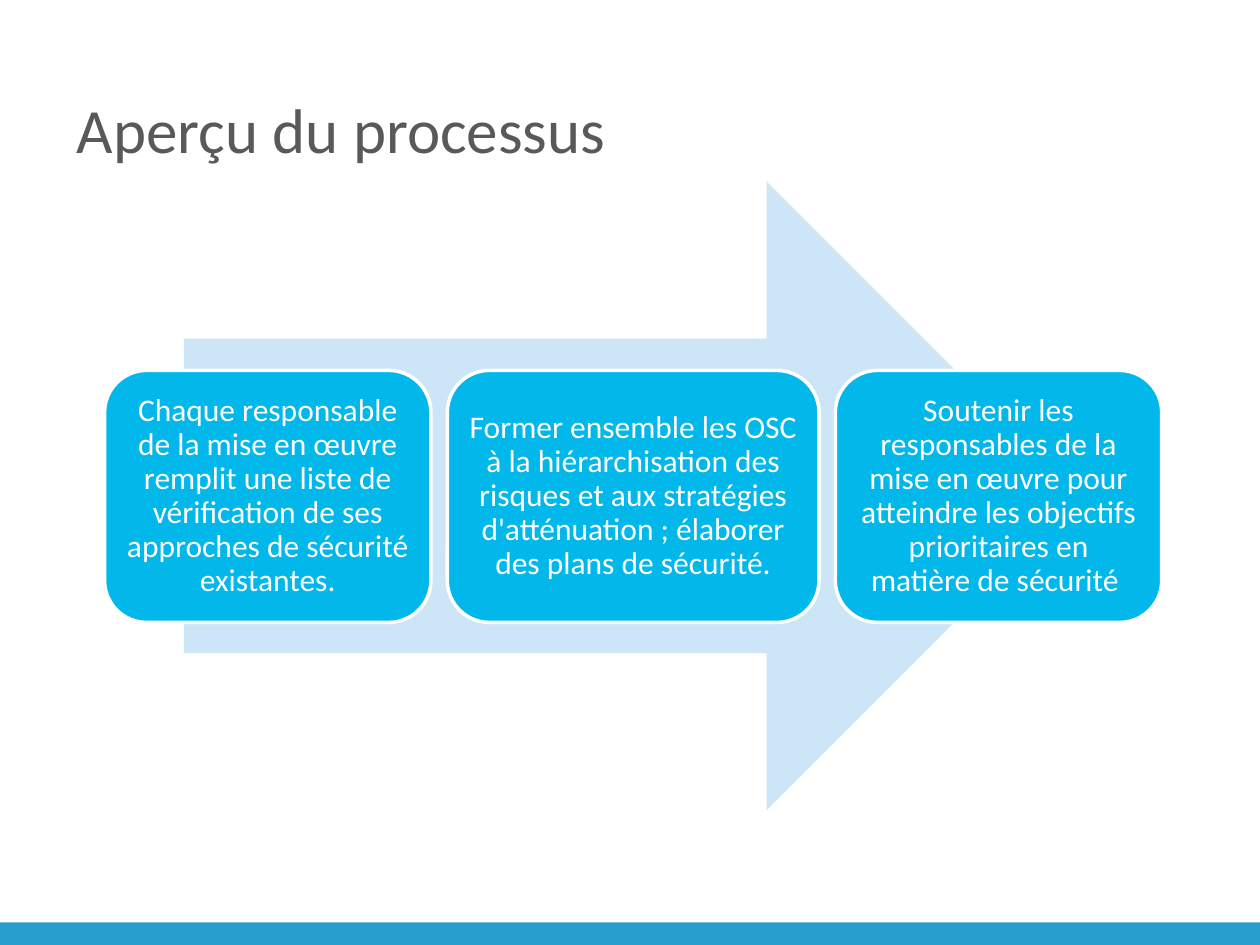
import pptx
import pptx.util
import pptx.dml.color
import pptx.enum.shapes
import pptx.enum.text

Inches = pptx.util.Inches
Pt = pptx.util.Pt
SHAPES = pptx.enum.shapes.MSO_SHAPE
ALIGN = pptx.enum.text.PP_ALIGN
MIDDLE = pptx.enum.text.MSO_ANCHOR.MIDDLE

WIDTH, HEIGHT = 10, 7.5
FONT = "Calibri"
STEP_LEFT, STEP_TOP, STEP_HEIGHT, STEP_GAP = 0.83, 2.94, 2, 0.13

# Width and wording of each step
STEPS = [
    (2.59, "Chaque responsable de la mise en œuvre remplit une liste de "
           "vérification de ses approches de sécurité existantes."),
    (2.95, "Former ensemble les OSC à la hiérarchisation des risques et aux "
           "stratégies d'atténuation ; élaborer des plans de sécurité."),
    (2.59, "Soutenir les responsables de la mise en œuvre pour atteindre les "
           "objectifs prioritaires en matière de sécurité "),
]


def color(value):
    return pptx.dml.color.RGBColor.from_string(value)


def place(box, left, top, width, height):
    box.left, box.top = Inches(left), Inches(top)
    box.width, box.height = Inches(width), Inches(height)


def write(box, text, size, shade, align):
    frame = box.text_frame
    frame.text = text
    frame.word_wrap = True
    frame.vertical_anchor = MIDDLE
    para = frame.paragraphs[0]
    para.alignment = align
    font = para.runs[0].font
    font.name, font.size = FONT, Pt(size)
    font.color.rgb = color(shade)


def add_block(page, kind, left, top, width, height, fill):
    block = page.shapes.add_shape(
        kind, Inches(left), Inches(top), Inches(width), Inches(height))
    block.shadow.inherit = False
    block.fill.solid()
    block.fill.fore_color.rgb = color(fill)
    block.line.fill.background()
    return block


def add_step(page, left, width, text):
    step = add_block(page, SHAPES.ROUNDED_RECTANGLE,
                     left, STEP_TOP, width, STEP_HEIGHT, "02B7EA")
    step.line.color.rgb = color("FFFFFF")
    step.line.width = Pt(2)
    write(step, text, 18, "FFFFFF", ALIGN.CENTER)
    frame = step.text_frame
    frame.margin_left = frame.margin_right = Inches(0.07)
    frame.margin_top = frame.margin_bottom = Inches(0.07)
    frame.paragraphs[0].line_spacing = 0.9


def main():
    deck = pptx.Presentation()
    deck.slide_width, deck.slide_height = Inches(WIDTH), Inches(HEIGHT)
    page = deck.slides.add_slide(deck.slide_layouts[5])

    # Title
    title = page.shapes.title
    place(title, 0.51, 0.49, 8.99, 1.06)
    write(title, "Aperçu du processus", 36, "595959", ALIGN.LEFT)

    # Footer band and background arrow
    add_block(page, SHAPES.RECTANGLE, 0, 7.32, WIDTH, HEIGHT - 7.32, "279ECE")
    add_block(page, SHAPES.RIGHT_ARROW, 1.46, 1.44, 7.12, 4.99, "CCE6F7")

    # Steps, laid out from left to right
    left = STEP_LEFT
    for width, text in STEPS:
        add_step(page, left, width, text)
        left += width + STEP_GAP

    deck.save("out.pptx")


if __name__ == "__main__":
    main()
